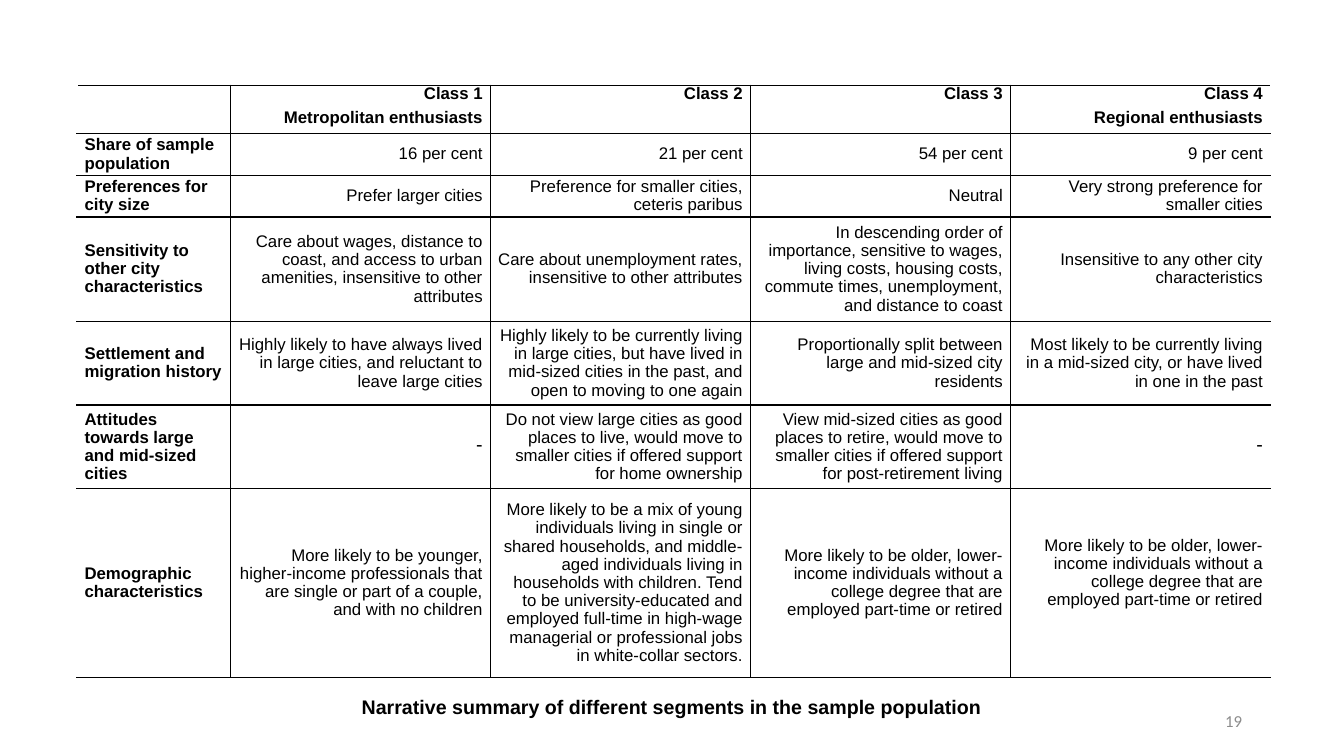
import dataclasses

import lxml.etree
import pptx
import pptx.dml.color
import pptx.enum.text
import pptx.oxml.ns
import pptx.slide
import pptx.table
import pptx.text.text
import pptx.util

ALIGN = pptx.enum.text.PP_ALIGN
ANCHOR = pptx.enum.text.MSO_ANCHOR
BLACK = "000000"
GREY = "8C8C8C"
GRID_COLUMNS, GRID_ROWS = 133.33, 75
TABLE_LEFT, TABLE_TOP = 7.64, 8.45
LABEL_WIDTH, CLASS_WIDTH = 15.2, 25.8
DASH_SIZE = 14


@dataclasses.dataclass(frozen=True)
class SegmentRow:
    height: float
    label: str
    classes: tuple[str, ...]
    header: bool = False


@dataclasses.dataclass(frozen=True)
class Caption:
    text: str
    left: float
    top: float
    width: float
    height: float
    size: int
    font: str
    color: str
    bold: bool
    align: ALIGN
    anchor: ANCHOR


OLDER = ("More likely to be older, lower-income individuals without a college "
         "degree that are employed part-time or retired")

SEGMENT_ROWS = (
    SegmentRow(4.8, "", ("Class 1\nMetropolitan enthusiasts", "Class 2", "Class 3",
                         "Class 4\nRegional enthusiasts"), header=True),
    SegmentRow(4.14, "Share of sample population",
               ("16 per cent", "21 per cent", "54 per cent", "9 per cent")),
    SegmentRow(4.14, "Preferences for city size", (
        "Prefer larger cities",
        "Preference for smaller cities, ceteris paribus",
        "Neutral",
        "Very strong preference for smaller cities")),
    SegmentRow(10.36, "Sensitivity to other city characteristics", (
        "Care about wages, distance to coast, and access to urban amenities, "
        "insensitive to other attributes",
        "Care about unemployment rates, insensitive to other attributes",
        "In descending order of importance, sensitive to wages, living costs, "
        "housing costs, commute times, unemployment, and distance to coast",
        "Insensitive to any other city characteristics")),
    SegmentRow(8.3, "Settlement and migration history", (
        "Highly likely to have always lived in large cities, and reluctant to "
        "leave large cities",
        "Highly likely to be currently living in large cities, but have lived in "
        "mid-sized cities in the past, and open to moving to one again",
        "Proportionally split between large and mid-sized city residents",
        "Most likely to be currently living in a mid-sized city, or have lived in "
        "one in the past")),
    SegmentRow(8.3, "Attitudes towards large and mid-sized cities", (
        "-",
        "Do not view large cities as good places to live, would move to smaller "
        "cities if offered support for home ownership",
        "View mid-sized cities as good places to retire, would move to smaller "
        "cities if offered support for post-retirement living",
        "-")),
    SegmentRow(18.7, "Demographic characteristics", (
        "More likely to be younger, higher-income professionals that are single or "
        "part of a couple, and with no children",
        "More likely to be a mix of young individuals living in single or shared "
        "households, and middle-aged individuals living in households with "
        "children. Tend to be university-educated and employed full-time in "
        "high-wage managerial or professional jobs in white-collar sectors.",
        OLDER,
        OLDER)),
)

CAPTIONS = (
    Caption("Narrative summary of different segments in the sample population",
            33.3, 68.4, 66.7, 3.4, 14, "Arial", BLACK, True, ALIGN.CENTER, ANCHOR.TOP),
    Caption("19", 94.2, 69.5, 30, 4, 12, "Calibri", GREY, False,
            ALIGN.RIGHT, ANCHOR.MIDDLE),
)


def grid(units: float) -> pptx.util.Length:
    """Turn grid units into a length."""
    return pptx.util.Inches(units / 10)


def rgb(color: str) -> pptx.dml.color.RGBColor:
    """Turn a hex string into a colour."""
    return pptx.dml.color.RGBColor.from_string(color)


def set_format(target: object, values: dict[str, object]) -> None:
    """Set every named attribute on the target."""
    for name, value in values.items():
        setattr(target, name, value)


def write_span(para: pptx.text.text._Paragraph, text: str, size: int, font: str,
               color: str, bold: bool) -> None:
    """Add one formatted span to a paragraph."""
    span = para.add_run()
    span.text = text
    set_format(span.font, {"size": pptx.util.Pt(size), "name": font, "bold": bold})
    span.font.color.rgb = rgb(color)


def draw_borders(cell: pptx.table._Cell, sides: str) -> None:
    """Draw one-point borders on the sides named by L, R, T and B."""
    properties = cell._tc.get_or_add_tcPr()
    qn = pptx.oxml.ns.qn
    for position, side in enumerate(sides):
        line = lxml.etree.Element(qn(f"a:ln{side}"), w=str(pptx.util.Pt(1)))
        fill = lxml.etree.SubElement(line, qn("a:solidFill"))
        lxml.etree.SubElement(fill, qn("a:srgbClr"), val=BLACK)
        properties.insert(position, line)


def fill_cell(cell: pptx.table._Cell, text: str, bold: bool, align: ALIGN,
              anchor: ANCHOR) -> None:
    """Write the text of one table cell."""
    set_format(cell, {
        "margin_left": grid(0.75), "margin_right": grid(0.75),
        "margin_top": 0, "margin_bottom": 0, "vertical_anchor": anchor,
    })
    cell.fill.background()
    frame = cell.text_frame
    for index, line in enumerate(text.splitlines()):
        para = frame.add_paragraph() if index else frame.paragraphs[0]
        set_format(para, {
            "alignment": align, "line_spacing": pptx.util.Pt(13),
            "space_before": pptx.util.Pt(2), "space_after": pptx.util.Pt(2),
        })
        write_span(para, line, DASH_SIZE if line == "-" else 12, "Arial", BLACK, bold)


def draw_table(page: pptx.slide.Slide, rows: tuple[SegmentRow, ...]) -> None:
    """Draw the table of population segments."""
    widths = (LABEL_WIDTH,) + (CLASS_WIDTH,) * len(rows[0].classes)
    height = sum(row.height for row in rows)
    table = page.shapes.add_table(
        len(rows), len(widths), grid(TABLE_LEFT), grid(TABLE_TOP),
        grid(sum(widths)), grid(height)).table
    set_format(table, {"first_row": False, "horz_banding": False})
    for column, width in zip(table.columns, widths):
        column.width = grid(width)
    for row_index, row in enumerate(rows):
        table.rows[row_index].height = grid(row.height)
        anchor = ANCHOR.TOP if row.header else ANCHOR.MIDDLE
        for column_index, text in enumerate((row.label, *row.classes)):
            cell = table.cell(row_index, column_index)
            is_label = column_index == 0
            fill_cell(cell, text, is_label or row.header,
                      ALIGN.LEFT if is_label else ALIGN.RIGHT, anchor)
            is_last = column_index == len(widths) - 1
            draw_borders(cell, "RTB" if is_label else "LTB" if is_last else "LRTB")
    table.cell(len(rows) - 1, len(widths) - 1).margin_bottom = grid(2)


def draw_caption(page: pptx.slide.Slide, caption: Caption) -> None:
    """Draw one line of text outside the table."""
    box = page.shapes.add_textbox(grid(caption.left), grid(caption.top),
                                  grid(caption.width), grid(caption.height))
    frame = box.text_frame
    set_format(frame, {"word_wrap": True, "vertical_anchor": caption.anchor})
    para = frame.paragraphs[0]
    para.alignment = caption.align
    write_span(para, caption.text, caption.size, caption.font, caption.color,
               caption.bold)


def main() -> None:
    """Build the slide and save it."""
    deck = pptx.Presentation()
    set_format(deck, {"slide_width": grid(GRID_COLUMNS), "slide_height": grid(GRID_ROWS)})
    page = deck.slides.add_slide(deck.slide_layouts[6])
    draw_table(page, SEGMENT_ROWS)
    for caption in CAPTIONS:
        draw_caption(page, caption)
    deck.save("out.pptx")


if __name__ == "__main__":
    main()
